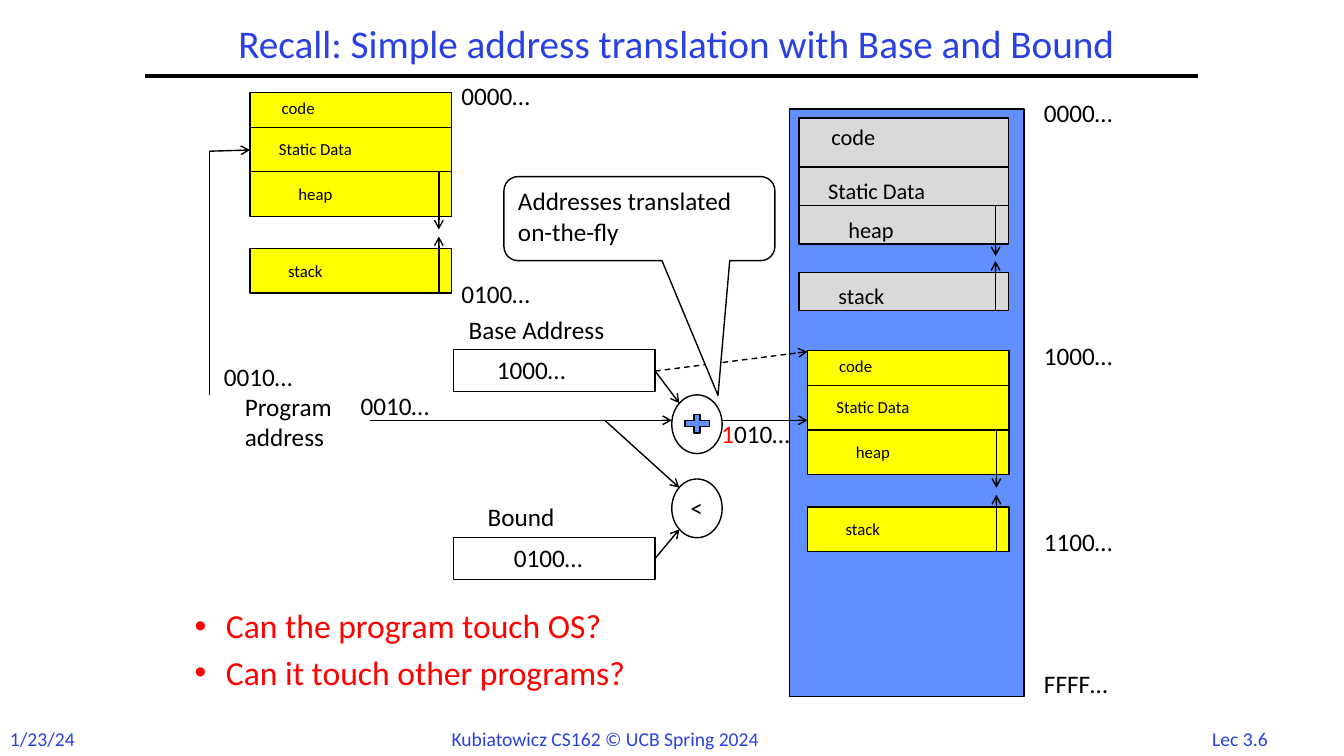
from dataclasses import dataclass
from typing import Optional

from lxml import etree
from pptx import Presentation
from pptx.dml.color import RGBColor
from pptx.enum.dml import MSO_LINE
from pptx.enum.shapes import MSO_CONNECTOR, MSO_SHAPE
from pptx.enum.text import MSO_ANCHOR, MSO_AUTO_SIZE, PP_ALIGN
from pptx.oxml.ns import qn
from pptx.util import Cm, Pt

RECT = MSO_SHAPE.RECTANGLE
OVAL = MSO_SHAPE.OVAL
PLUS = MSO_SHAPE.MATH_PLUS
BUBBLE = MSO_SHAPE.ROUNDED_RECTANGULAR_CALLOUT
STRAIGHT = MSO_CONNECTOR.STRAIGHT
DASH = MSO_LINE.DASH
LEFT, CENTER = PP_ALIGN.LEFT, PP_ALIGN.CENTER
TOP, MIDDLE = MSO_ANCHOR.TOP, MSO_ANCHOR.MIDDLE
GROW, FIXED = MSO_AUTO_SIZE.SHAPE_TO_FIT_TEXT, MSO_AUTO_SIZE.NONE

FONT = "Calibri"
COLORS = {
    "ink": "000000",
    "title": "2A40E2",
    "memory": "618FFD",
    "system": "D9D9D9",
    "program": "FFFF00",
    "alert": "FF0000",
    "white": "FFFFFF",
}


@dataclass
class Label:
    text: str
    x: float
    y: float
    width: float = 2.59
    size: int = 18
    color: str = "ink"
    align: PP_ALIGN = LEFT


@dataclass
class Box:
    kind: MSO_SHAPE
    x: float
    y: float
    width: float
    height: float
    fill: Optional[str] = None


@dataclass
class Link:
    x1: float
    y1: float
    x2: float
    y2: float
    arrow: bool = True
    dashed: bool = False
    weight: float = 1


@dataclass
class Row:
    text: str
    y: float
    height: float
    indent: float
    drop: float
    width: float


@dataclass
class Stack:
    x: float
    y: float
    width: float
    fill: str
    size: int
    rows: list[Row]
    shaft: float
    rise: float
    fall: float


SMALL = [
    Row("code", 0, 0.88, 0.55, 0, 1.42),
    Row("Static Data", 0.88, 1.12, 0.48, 0.16, 2.59),
    Row("heap", 2, 1.12, 0.97, 0.17, 1.45),
    Row("stack", 3.94, 1.12, 0.71, 0.17, 1.5),
]
LARGE = [
    Row("code", 0, 1.24, 0.56, 0, 1.75),
    Row("Static Data", 1.24, 0.97, 0.48, 0.14, 3.3),
    Row("heap", 2.21, 0.97, 0.99, 0.15, 1.78),
    Row("stack", 3.89, 0.97, 0.74, 0.13, 1.85),
]
STACKS = [
    Stack(20.14, 2.97, 5.28, "system", 16, LARGE, 4.95, 3.61, 3.48),
    Stack(20.35, 8.84, 5.08, "program", 12, SMALL, 4.76, 3.63, 3.45),
    Stack(6.3, 2.33, 5.08, "program", 12, SMALL, 4.76, 3.63, 3.45),
]
BOXES = [
    Box(RECT, 11.43, 8.81, 5.08, 1.06),
    Box(RECT, 11.43, 13.54, 5.08, 1.06),
    Box(PLUS, 17.15, 10.36, 0.84, 0.64, "memory"),
    Box(OVAL, 16.93, 9.95, 1.27, 1.48),
    Box(OVAL, 16.93, 12.07, 1.27, 1.48),
]
LINKS = [
    Link(3.66, 1.91, 30.2, 1.91, arrow=False, weight=3),
    Link(16.51, 9.35, 20.35, 8.86, dashed=True),
    Link(9.32, 10.59, 16.93, 10.59),
    Link(5.28, 3.81, 6.3, 3.78),
    Link(18.21, 10.59, 20.35, 10.59),
    Link(16.51, 9.35, 17.12, 10.16),
    Link(15.24, 10.59, 17.12, 12.29),
    Link(16.51, 14.07, 17.12, 13.34),
    Link(5.28, 3.81, 5.28, 9.96, arrow=False),
]
LABELS = [
    Label("0000…", 26.06, 2.34),
    Label("1000…", 26.06, 8.46),
    Label("1100…", 26.06, 13.13),
    Label("FFFF…", 26.06, 16.71, 2.72),
    Label("0000…", 11.38, 1.9),
    Label("0100…", 11.38, 6.88),
    Label("Program\naddress", 5.92, 9.73, 2.97),
    Label("Base Address", 11.56, 7.8, 4.47),
    Label("Bound", 12.04, 12.52, 2.77),
    Label("1000…", 12.27, 8.81),
    Label("0100…", 12.7, 13.54),
    Label("<", 17.15, 12.27, 0.89),
    Label("0010…", 5.39, 8.97),
    Label("0010…", 8.84, 9.7),
    Label("1/23/24", 0, 18.19, 2.16, 14, "title"),
    Label("Kubiatowicz CS162 © UCB Spring 2024", 11.13, 18.19, 9.35, 14, "title"),
    Label("Lec 3.6", 30.02, 18.19, 2.46, 14, "title", CENTER),
]


def tint(name: str) -> RGBColor:
    return RGBColor.from_string(COLORS[name])


def style(frame, size: int, color: str, align: PP_ALIGN = LEFT) -> None:
    for para in frame.paragraphs:
        para.alignment = align
        for run in para.runs:
            run.font.name = FONT
            run.font.size = Pt(size)
            run.font.color.rgb = tint(color)


def write(slide, label: Label):
    box = slide.shapes.add_textbox(Cm(label.x), Cm(label.y), Cm(label.width), Cm(label.size / 18))
    frame = box.text_frame
    frame.text = label.text
    frame.word_wrap = False
    frame.auto_size = GROW
    style(frame, label.size, label.color, label.align)
    return frame


def draw(slide, box: Box):
    shape = slide.shapes.add_shape(box.kind, Cm(box.x), Cm(box.y), Cm(box.width), Cm(box.height))
    shape.shadow.inherit = False
    if box.fill:
        shape.fill.solid()
        shape.fill.fore_color.rgb = tint(box.fill)
    else:
        shape.fill.background()
    shape.line.color.rgb = tint("ink")
    shape.line.width = Pt(1)
    return shape


def join(slide, link: Link) -> None:
    line = slide.shapes.add_connector(STRAIGHT, Cm(link.x1), Cm(link.y1), Cm(link.x2), Cm(link.y2))
    line.line.color.rgb = tint("ink")
    line.line.width = Pt(link.weight)
    if link.dashed:
        line.line.dash_style = DASH
    if link.arrow:
        etree.SubElement(line.line._get_or_add_ln(), qn("a:tailEnd"), type="arrow")
    etree.SubElement(line._element.spPr, qn("a:effectLst"))


def pile(slide, stack: Stack) -> None:
    for row in stack.rows:
        top = stack.y + row.y
        draw(slide, Box(RECT, stack.x, top, stack.width, row.height, stack.fill))
        write(slide, Label(row.text, stack.x + row.indent, top + row.drop, row.width, stack.size))
    heap, last = stack.rows[2:]
    x = stack.x + stack.shaft
    join(slide, Link(x, stack.y + last.y + last.height, x, stack.y + stack.rise))
    join(slide, Link(x, stack.y + heap.y, x, stack.y + stack.fall))


def place(holder, box: Box, text: str, anchor: MSO_ANCHOR):
    holder.left, holder.top = Cm(box.x), Cm(box.y)
    holder.width, holder.height = Cm(box.width), Cm(box.height)
    frame = holder.text_frame
    frame.text = text
    frame.auto_size = FIXED
    frame.vertical_anchor = anchor
    for para in frame.paragraphs:
        para.line_spacing = 0.9
    return frame


def main() -> None:
    deck = Presentation()
    deck.slide_width, deck.slide_height = Cm(33.87), Cm(19.05)
    slide = deck.slides.add_slide(deck.slide_layouts[1])

    title = place(slide.shapes.title, Box(RECT, 4.24, 0.43, 25.6, 1.47),
                  "Recall: Simple address translation with Base and Bound", MIDDLE)
    style(title, 28, "title", CENTER)
    body = place(slide.placeholders[1], Box(RECT, 4.65, 15.24, 14.81, 3.18),
                 "Can the program touch OS?\nCan it touch other programs?", TOP)
    style(body, 24, "alert")
    for para in body.paragraphs:
        para.space_before = Pt(7.2)
        props = para._p.get_or_add_pPr()
        props.set("marL", str(Cm(0.79)))
        props.set("indent", str(-Cm(0.79)))

    draw(slide, Box(RECT, 19.89, 2.75, 5.92, 14.81, "memory"))
    for stack in STACKS:
        pile(slide, stack)
    for box in BOXES:
        draw(slide, box)
    for link in LINKS:
        join(slide, link)
    for label in LABELS:
        write(slide, label)

    bubble = draw(slide, Box(BUBBLE, 12.7, 4.45, 6.83, 2.12, "white"))
    for index, value in enumerate((0.29, 2.1, 0.17)):
        bubble.adjustments[index] = value
    bubble.text_frame.text = "Addresses translated\von-the-fly"
    bubble.text_frame.word_wrap = True
    bubble.text_frame.vertical_anchor = TOP
    style(bubble.text_frame, 18, "ink")

    sum_frame = write(slide, Label("1", 17.93, 10.41))
    sum_frame.paragraphs[0].add_run().text = "010…"
    style(sum_frame, 18, "ink")
    sum_frame.paragraphs[0].runs[0].font.color.rgb = tint("alert")

    deck.save("out.pptx")


if __name__ == "__main__":
    main()
